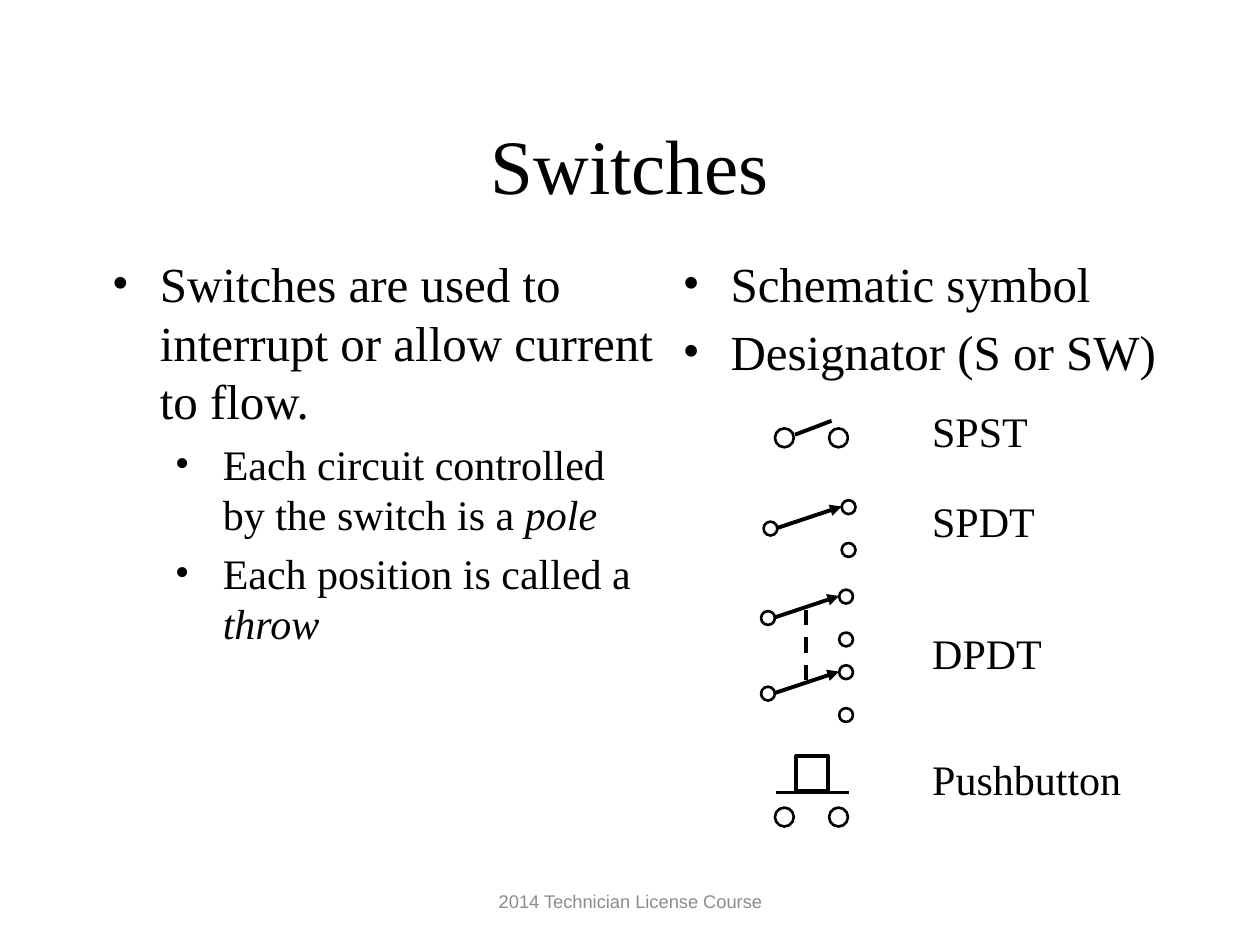
from lxml import etree
from pptx import Presentation, util as u
from pptx.dml.color import RGBColor
from pptx.enum import dml, shapes, text
from pptx.oxml.ns import qn

BLACK = RGBColor(0, 0, 0)
WHITE = RGBColor(255, 255, 255)
GREY = RGBColor(0x8C, 0x8C, 0x8C)
SERIF = "Times New Roman"

deck = Presentation()
deck.slide_width, deck.slide_height = u.Inches(10), u.Inches(7.5)
slide = deck.slides.add_slide(deck.slide_layouts[6])


def outline(kind, x, y, wide, high, width=1.5, fill=None):
    item = slide.shapes.add_shape(kind, *map(u.Inches, (x, y, wide, high)))
    item.shadow.inherit = False
    if fill is None:
        item.fill.background()
    else:
        item.fill.solid()
        item.fill.fore_color.rgb = fill
    item.line.color.rgb = BLACK
    item.line.width = u.Pt(width)


def stroke(x1, y1, x2, y2, arrow=False, dash=False):
    wire = slide.shapes.add_connector(
        shapes.MSO_CONNECTOR.STRAIGHT, *map(u.Inches, (x1, y1, x2, y2)))
    wire.line.color.rgb = BLACK
    wire.line.width = u.Pt(2.25)
    if dash:
        wire.line.dash_style = dml.MSO_LINE.DASH
    if arrow:
        etree.SubElement(wire.line._get_or_add_ln(), qn("a:tailEnd"), type="triangle")
    etree.SubElement(wire._element.spPr, qn("a:effectLst"))


labels = [
    ("Switches", 0.75, 0.67, 8.5, 1.25, 44, SERIF, BLACK, True),
    ("SPST", 7.3, 3.17, 0.97, 0.5, 24, SERIF, BLACK, False),
    ("SPDT", 7.3, 3.88, 1.03, 0.5, 24, SERIF, BLACK, False),
    ("DPDT", 7.3, 4.93, 1.08, 0.5, 24, SERIF, BLACK, False),
    ("Pushbutton", 7.3, 5.93, 1.72, 0.5, 24, SERIF, BLACK, False),
    ("2014 Technician License Course", 3.42, 6.95, 3.17, 0.4, 10.5, "Arial", GREY, True),
]
for words, x, y, wide, high, size, face, tint, mid in labels:
    frame = slide.shapes.add_textbox(*map(u.Inches, (x, y, wide, high))).text_frame
    frame.word_wrap = mid
    para = frame.paragraphs[0]
    if mid:
        frame.vertical_anchor = text.MSO_ANCHOR.MIDDLE
        para.alignment = text.PP_ALIGN.CENTER
    run = para.add_run()
    run.text = words
    run.font.size = u.Pt(size)
    run.font.name = face
    run.font.color.rgb = tint

lists = [
    (0.79, 4.51, 4.77, [
        (0, "Switches are used to interrupt or allow current to flow.", ""),
        (1, "Each circuit controlled by the switch is a ", "pole"),
        (1, "Each position is called a ", "throw"),
    ]),
    (5.32, 4.17, 4.75, [
        (0, "Schematic symbol", ""),
        (0, "Designator (S or SW)", ""),
    ]),
]
for x, wide, high, points in lists:
    frame = slide.shapes.add_textbox(*map(u.Inches, (x, 1.91, wide, high))).text_frame
    frame.word_wrap = True
    frame.margin_top = u.Inches(0.1)
    for n, (level, plain, term) in enumerate(points):
        para = frame.add_paragraph() if n else frame.paragraphs[0]
        size = 28 - 4 * level
        props = para._p.get_or_add_pPr()
        props.set("marL", str(u.Inches(0.38 + 0.5 * level)))
        props.set("indent", str(u.Inches(-0.38)))
        etree.SubElement(props, qn("a:buFont"), typeface=SERIF)
        etree.SubElement(props, qn("a:buChar"), char="•")
        para.level = level
        if n:
            para.space_before = u.Pt(0.2 * size)
        for words, slant in ((plain, False), (term, True)):
            if words:
                run = para.add_run()
                run.text = words
                run.font.size = u.Pt(size)
                run.font.name = SERIF
                run.font.italic = slant
                run.font.color.rgb = BLACK

OVAL = shapes.MSO_SHAPE.OVAL
for y in (3.4, 6.41):
    for x in (6.15, 6.58):
        outline(OVAL, x, y, 0.15, 0.15)
stroke(6.31, 3.45, 6.6, 3.34)

for x, y in ((6.06, 4.14), (6.04, 4.85), (6.04, 5.45)):
    for dx, dy in ((0, 0), (0.62, 0.17), (0.62, -0.17)):
        outline(OVAL, x + dx, y + dy, 0.11, 0.11, fill=WHITE)
    stroke(x + 0.11, y + 0.05, x + 0.62, y - 0.12, arrow=True)
stroke(6.4, 4.84, 6.4, 5.43, dash=True)

stroke(6.16, 6.29, 6.74, 6.29)
outline(shapes.MSO_SHAPE.RECTANGLE, 6.32, 6, 0.25, 0.28, 2.25, WHITE)

deck.save("out.pptx")
